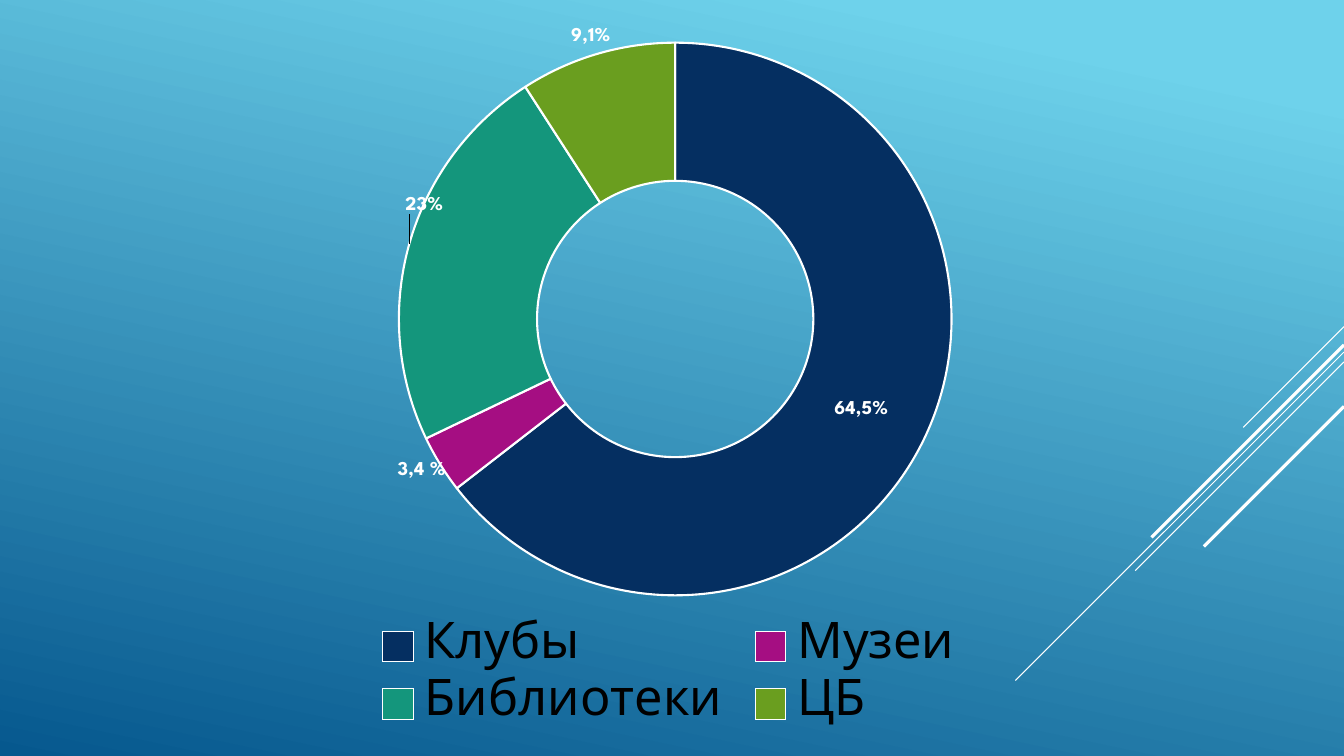
from lxml import etree
from pptx import Presentation
from pptx.chart.data import CategoryChartData
from pptx.dml.color import RGBColor
from pptx.enum.chart import XL_CHART_TYPE, XL_LEGEND_POSITION
from pptx.enum.shapes import MSO_CONNECTOR
from pptx.oxml.ns import qn
from pptx.util import Cm, Pt

DOUGHNUT = XL_CHART_TYPE.DOUGHNUT
LEGEND_BOTTOM = XL_LEGEND_POSITION.BOTTOM
STRAIGHT = MSO_CONNECTOR.STRAIGHT

FONT = "League Spartan"
WHITE = "FFFFFF"
SLIDE_WIDTH, SLIDE_HEIGHT = 33.87, 19.05
SECTORS = [
    ("Клубы", 6040.8, "64,5%", "052F61", None),
    ("Музеи", 316.4, "3,4 %", "A50E82", (-0.06, 0.06)),
    ("Библиотеки", 2153, "23%", "14967C", (-0.04, -0.08)),
    ("ЦБ", 854.6, "9,1%", "6A9E1F", (-0.02, -0.12)),
]
DIAGONALS = [
    (0, 2.54, 0.75),
    (0.64, 8.28, 0.75),
    (0.89, 5.26, 0.75),
    (0.46, 4.85, 2.25),
    (2.01, 3.53, 2.25),
]


def color(hex_value):
    return RGBColor.from_string(hex_value)


def format_font(font, size, hex_value, bold=False):
    font.name = FONT
    font.size = Pt(size)
    font.bold = bold
    font.color.rgb = color(hex_value)


def place_manually(parent, index, **settings):
    for old_layout in parent.findall(qn("c:layout")):
        parent.remove(old_layout)
    layout = etree.Element(qn("c:layout"))
    manual = etree.SubElement(layout, qn("c:manualLayout"))
    for name, value in settings.items():
        etree.SubElement(manual, qn("c:" + name)).set("val", str(value))
    parent.insert(index, layout)


def paint_background(slide):
    fill = slide.background.fill
    fill.gradient()
    fill.gradient_angle = 258
    for stop, position, hex_value in zip(
        fill.gradient_stops, (0.1, 1), ("6ED2EB", "06588E")
    ):
        stop.position = position
        stop.color.rgb = color(hex_value)


def add_diagonals(slide, right, top):
    for drop, run, width in DIAGONALS:
        start = top + drop
        line = slide.shapes.add_connector(
            STRAIGHT, Cm(right), Cm(start), Cm(right - run), Cm(start + run)
        )
        line.line.color.rgb = color(WHITE)
        line.line.width = Pt(width)
        etree.SubElement(line._element.spPr, qn("a:effectLst"))


def format_sector(point, label_text, hex_value, offset):
    point.format.fill.solid()
    point.format.fill.fore_color.rgb = color(hex_value)
    point.format.line.color.rgb = color(WHITE)
    point.format.line.width = Pt(1.5)
    label = point.data_label
    paragraph = label.text_frame.paragraphs[0]
    paragraph.text = label_text
    format_font(paragraph.runs[0].font, 14, WHITE, True)
    if offset:
        place_manually(label._dLbl, 1, x=offset[0], y=offset[1])


def add_doughnut(slide, left, top, width, height):
    data = CategoryChartData()
    data.categories = [sector[0] for sector in SECTORS]
    data.add_series("Series 1", [sector[1] for sector in SECTORS])
    chart = slide.shapes.add_chart(
        DOUGHNUT, Cm(left), Cm(top), Cm(width), Cm(height), data
    ).chart
    chart.has_title = False
    format_font(chart.font, 10, WHITE)
    chart.has_legend = True
    chart.legend.position = LEGEND_BOTTOM
    chart.legend.include_in_layout = False
    format_font(chart.legend.font, 36, "000000")

    plot = chart.plots[0]
    plot.vary_by_categories = True
    series = plot.series[0]
    series.data_labels.show_value = True
    format_font(series.data_labels.font, 14, WHITE, True)
    for index, (_, _, label_text, hex_value, offset) in enumerate(SECTORS):
        format_sector(series.points[index], label_text, hex_value, offset)

    plot_area = chart._chartSpace.chart.plotArea
    plot_area.find(".//" + qn("c:holeSize")).set("val", "50")
    place_manually(
        plot_area, 0, layoutTarget="inner", xMode="edge", yMode="edge",
        x=0.29, y=0.02, w=0.43, h=0.78,
    )


def main():
    presentation = Presentation()
    presentation.slide_width = Cm(SLIDE_WIDTH)
    presentation.slide_height = Cm(SLIDE_HEIGHT)
    slide = presentation.slides.add_slide(presentation.slide_layouts[6])
    paint_background(slide)
    add_diagonals(slide, SLIDE_WIDTH, 8.23)
    add_doughnut(slide, 0.66, 0.71, 32.39, 17.88)
    presentation.save("out.pptx")


if __name__ == "__main__":
    main()
